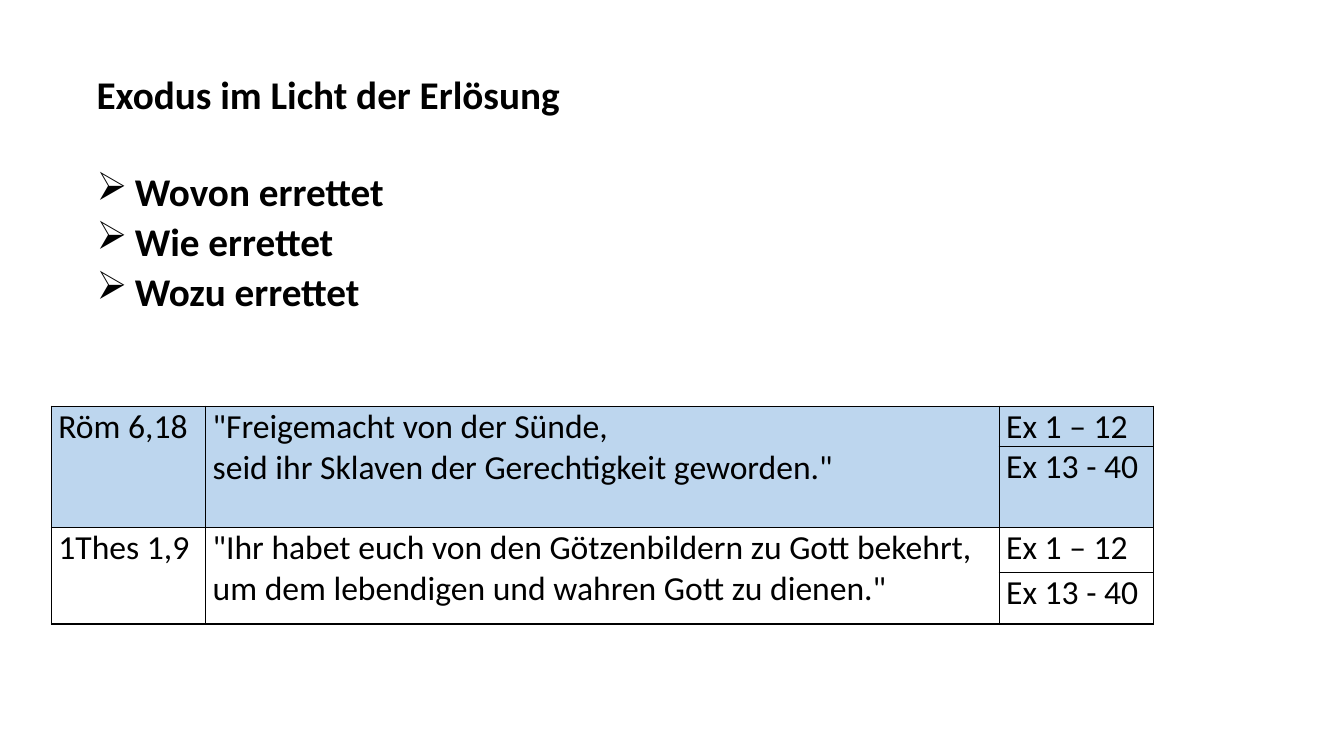
"""Builds the slide on Exodus in the light of redemption."""
from lxml import etree
from pptx import Presentation
from pptx.dml.color import RGBColor
from pptx.enum.text import MSO_AUTO_SIZE
from pptx.oxml.ns import qn
from pptx.util import Inches, Pt

FIT_SHAPE = MSO_AUTO_SIZE.SHAPE_TO_FIT_TEXT
FONT = "Calibri"
COLORS = {"ink": "000000", "highlight": "BDD6EE"}

HEADING = ["Exodus im Licht der Erlösung"]
QUESTIONS = ["Wovon errettet", "Wie errettet", "Wozu errettet"]
VERSES = [
    ("Röm 6,18",
     ["\"Freigemacht von der Sünde,", "seid ihr Sklaven der Gerechtigkeit geworden.\""],
     ["Ex 1 – 12", "Ex 13 - 40"], "highlight"),
    ("1Thes 1,9",
     ["\"Ihr habet euch von den Götzenbildern zu Gott bekehrt,",
      "um dem lebendigen und wahren Gott zu dienen.\""],
     ["Ex 1 – 12", "Ex 13 - 40"], None),
]
COLUMN_WIDTHS = [1.53, 7.87, 1.53]
ROW_HEIGHTS = [0.4, 0.8, 0.45, 0.51]
BULLET, BULLET_INDENT = "➢", 0.38
BORDER_WIDTH = 1


def write_lines(frame, lines, size, bold=False):
    frame.text = "\n".join(lines)
    for paragraph in frame.paragraphs:
        for run in paragraph.runs:
            run.font.name = FONT
            run.font.size = Pt(size)
            run.font.bold = bold
            run.font.color.rgb = RGBColor.from_string(COLORS["ink"])


def add_text(slide, lines, left, top, width, height):
    frame = slide.shapes.add_textbox(*map(Inches, (left, top, width, height))).text_frame
    frame.word_wrap = True
    frame.auto_size = FIT_SHAPE
    write_lines(frame, lines, 28, bold=True)
    return frame


def add_bullet(paragraph):
    paragraph.space_before = Pt(2)
    properties = paragraph._p.get_or_add_pPr()
    properties.set("marL", str(Inches(BULLET_INDENT)))
    properties.set("indent", str(-Inches(BULLET_INDENT)))
    etree.SubElement(properties, qn("a:buChar"), char=BULLET)


def style_cell(cell, fill):
    cell.margin_left = cell.margin_right = Inches(0.07)
    cell.margin_top = cell.margin_bottom = 0
    if fill:
        cell.fill.solid()
        cell.fill.fore_color.rgb = RGBColor.from_string(COLORS[fill])
    else:
        cell.fill.background()
    properties = cell._tc.get_or_add_tcPr()
    for position, side in enumerate(("a:lnL", "a:lnR", "a:lnT", "a:lnB")):
        border = etree.Element(qn(side), w=str(Pt(BORDER_WIDTH)))
        solid = etree.SubElement(border, qn("a:solidFill"))
        etree.SubElement(solid, qn("a:srgbClr"), val=COLORS["ink"])
        properties.insert(position, border)


def add_verses(slide, left, top):
    table = slide.shapes.add_table(
        len(ROW_HEIGHTS), len(COLUMN_WIDTHS), Inches(left), Inches(top),
        Inches(sum(COLUMN_WIDTHS)), Inches(sum(ROW_HEIGHTS))).table
    table.first_row = table.horz_banding = False
    for column, width in zip(table.columns, COLUMN_WIDTHS):
        column.width = Inches(width)
    for row, height in zip(table.rows, ROW_HEIGHTS):
        row.height = Inches(height)
    for index, (reference, quote, chapters, fill) in enumerate(VERSES):
        first = index * 2
        for offset, chapter in enumerate(chapters):
            for column in range(len(COLUMN_WIDTHS)):
                style_cell(table.cell(first + offset, column), fill)
            write_lines(table.cell(first + offset, 2).text_frame, [chapter], 24)
        for column, lines in enumerate(([reference], quote)):
            cell = table.cell(first, column)
            cell.merge(table.cell(first + 1, column))
            write_lines(cell.text_frame, lines, 24)


def main():
    deck = Presentation()
    deck.slide_width, deck.slide_height = Inches(13.33), Inches(7.5)
    slide = deck.slides.add_slide(deck.slide_layouts[6])
    add_text(slide, HEADING, 0.86, 0.65, 5.52, 0.57)
    questions = add_text(slide, QUESTIONS, 0.86, 1.61, 10.83, 1.57)
    for paragraph in questions.paragraphs:
        add_bullet(paragraph)
    add_verses(slide, 0.51, 4.03)
    deck.save("out.pptx")


if __name__ == "__main__":
    main()
